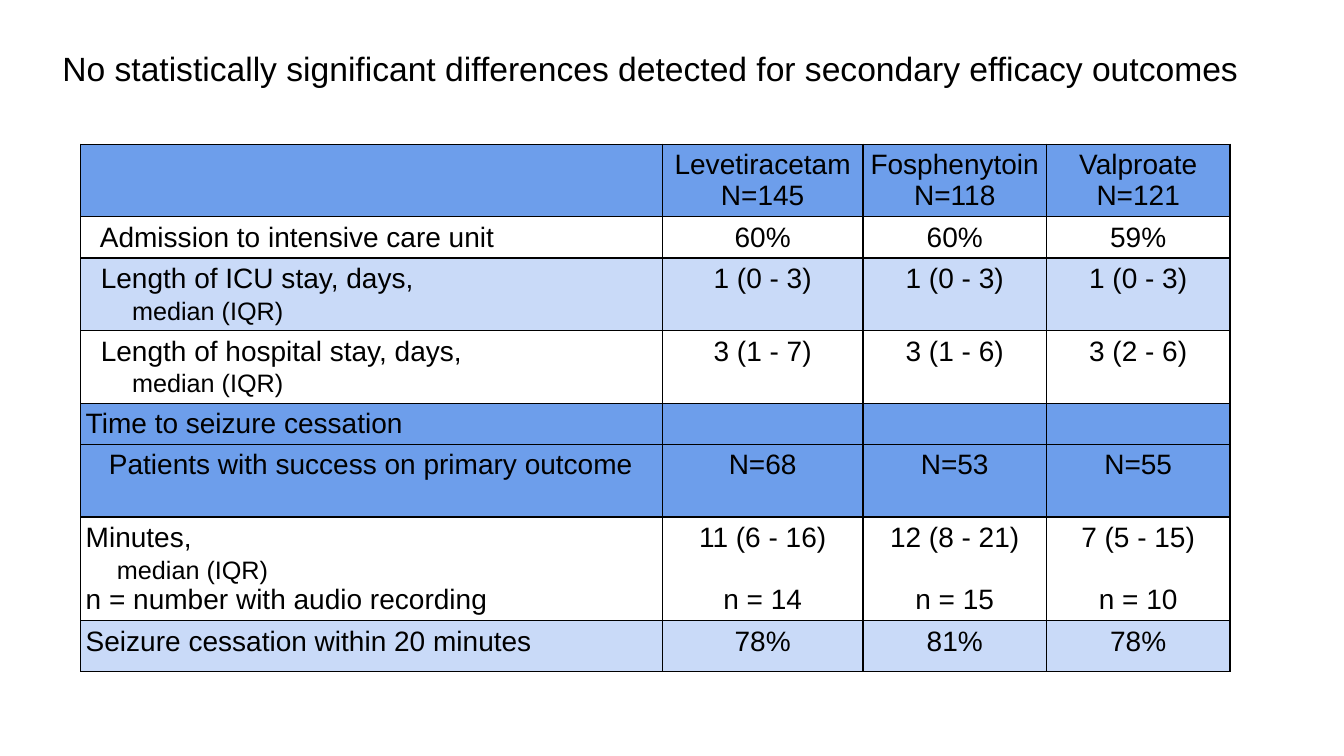
from dataclasses import dataclass

from lxml import etree
from pptx import Presentation
from pptx.dml.color import RGBColor
from pptx.enum.text import PP_ALIGN
from pptx.oxml.ns import qn
from pptx.table import _Cell
from pptx.text.text import TextFrame
from pptx.util import Inches, Pt

LEFT, CENTER = PP_ALIGN.LEFT, PP_ALIGN.CENTER
BLANK_LAYOUT = 6


@dataclass(frozen=True)
class Theme:
    font: str = "Arial"
    ink: str = "000000"
    header: str = "6D9EEB"
    band: str = "C9DAF8"
    plain: str = "FFFFFF"
    title_size: float = 24
    body_size: float = 20
    note_size: float = 18
    border_width: float = 1


THEME = Theme()


@dataclass(frozen=True)
class Line:
    text: str
    indent: float = 0
    size: float = THEME.body_size
    space_before: float = 0
    align: PP_ALIGN = LEFT


@dataclass(frozen=True)
class OutcomeRow:
    height: float
    fill: str
    label: tuple[Line, ...] = ()
    values: tuple[str, ...] = ("", "", "")
    counts: tuple[str, ...] = ("", "", "")


def median_note(indent: float) -> Line:
    return Line("median (IQR)", indent, THEME.note_size, space_before=2)


COLUMN_WIDTHS = (5.77, 1.99, 1.82, 1.82)
CELL_MARGIN = 0.05
COUNT_GAP = 22.3  # points, one body line
ROWS = (
    OutcomeRow(0.72, THEME.header, values=(
        "Levetiracetam\nN=145", "Fosphenytoin\nN=118", "Valproate\nN=121")),
    OutcomeRow(0.41, THEME.plain, (Line("Admission to intensive care unit", 0.14),),
               ("60%", "60%", "59%")),
    OutcomeRow(0.72, THEME.band, (Line("Length of ICU stay, days,", 0.15), median_note(0.46)),
               ("1 (0 - 3)",) * 3),
    OutcomeRow(0.72, THEME.plain, (Line("Length of hospital stay, days,", 0.15), median_note(0.46)),
               ("3 (1 - 7)", "3 (1 - 6)", "3 (2 - 6)")),
    OutcomeRow(0.41, THEME.header, (Line("Time to seizure cessation"),)),
    OutcomeRow(0.72, THEME.header, (Line("Patients with success on primary outcome", 0.23),),
               ("N=68", "N=53", "N=55")),
    OutcomeRow(1.03, THEME.plain,
               (Line("Minutes,"), median_note(0.31), Line("n = number with audio recording")),
               ("11 (6 - 16)", "12 (8 - 21)", "7 (5 - 15)"),
               ("n = 14", "n = 15", "n = 10")),
    OutcomeRow(0.5, THEME.band, (Line("Seizure cessation within 20 minutes"),),
               ("78%", "81%", "78%")),
)


def write_lines(frame: TextFrame, lines: tuple[Line, ...]) -> None:
    for index, line in enumerate(lines):
        para = frame.add_paragraph() if index else frame.paragraphs[0]
        para.alignment = line.align
        para.space_before = Pt(line.space_before)
        properties = para._p.get_or_add_pPr()
        properties.set("marL", str(Inches(line.indent)))
        properties.set("indent", "0")
        for position, text in enumerate(line.text.split("\n")):
            if position:
                para.add_line_break()
            span = para.add_run()
            span.text = text
            span.font.name = THEME.font
            span.font.size = Pt(line.size)
            span.font.color.rgb = RGBColor.from_string(THEME.ink)


def style_cell(cell: _Cell, fill: str) -> None:
    cell.margin_left = cell.margin_right = Inches(CELL_MARGIN)
    cell.margin_top = cell.margin_bottom = Inches(CELL_MARGIN)
    properties = cell._tc.get_or_add_tcPr()
    for side in ("a:lnL", "a:lnR", "a:lnT", "a:lnB"):
        border = etree.SubElement(properties, qn(side), w=str(Pt(THEME.border_width)))
        solid = etree.SubElement(border, qn("a:solidFill"))
        etree.SubElement(solid, qn("a:srgbClr"), val=THEME.ink)
    cell.fill.solid()
    cell.fill.fore_color.rgb = RGBColor.from_string(fill)


def value_lines(value: str, count: str) -> tuple[Line, ...]:
    """Centred lines of a drug column, leaving out whichever text is empty."""
    lines = (Line(value, align=CENTER),
             Line(count, space_before=COUNT_GAP, align=CENTER))
    return tuple(line for line in lines if line.text)


def add_title(page) -> None:
    box = page.shapes.add_textbox(Inches(0.52), Inches(0.38), Inches(12.27), Inches(0.74))
    frame = box.text_frame
    frame.word_wrap = True
    frame.margin_left = frame.margin_right = Inches(0.1)
    frame.margin_top = frame.margin_bottom = Inches(0.1)
    write_lines(frame, (Line(
        "No statistically significant differences detected for secondary efficacy outcomes",
        size=THEME.title_size),))


def add_outcome_table(page) -> None:
    table = page.shapes.add_table(
        len(ROWS), len(COLUMN_WIDTHS), Inches(0.8), Inches(1.43),
        Inches(sum(COLUMN_WIDTHS)), Inches(sum(row.height for row in ROWS))).table
    table.first_row = table.horz_banding = False
    for column, width in zip(table.columns, COLUMN_WIDTHS):
        column.width = Inches(width)
    for row_index, row in enumerate(ROWS):
        table.rows[row_index].height = Inches(row.height)
        contents = (row.label, *map(value_lines, row.values, row.counts))
        for column_index, lines in enumerate(contents):
            cell = table.cell(row_index, column_index)
            style_cell(cell, row.fill)
            write_lines(cell.text_frame, lines)


def main() -> None:
    deck = Presentation()
    deck.slide_width, deck.slide_height = Inches(13.33), Inches(7.5)
    page = deck.slides.add_slide(deck.slide_layouts[BLANK_LAYOUT])
    add_outcome_table(page)
    add_title(page)
    deck.save("out.pptx")


if __name__ == "__main__":
    main()
